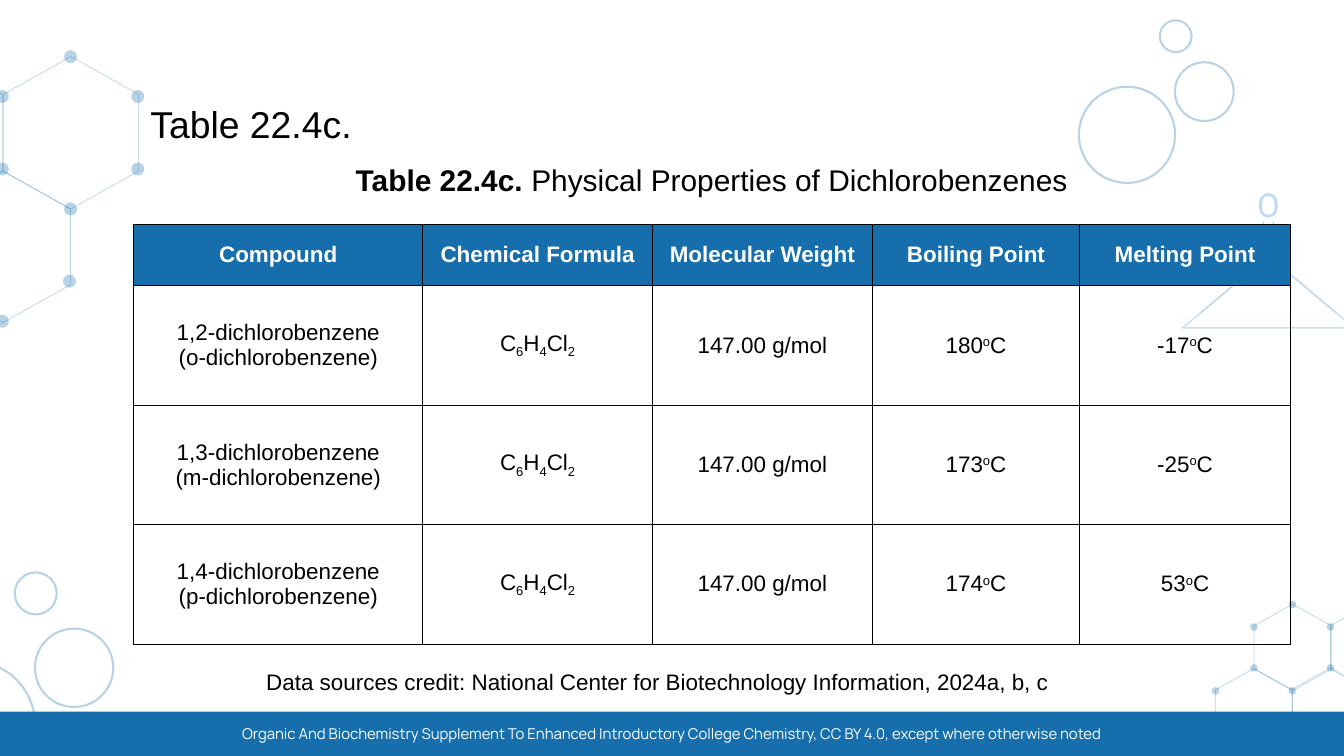
from lxml.etree import SubElement
from pptx import Presentation
from pptx.dml.color import RGBColor
from pptx.enum.shapes import MSO_CONNECTOR, MSO_SHAPE as SHAPE
from pptx.enum.text import MSO_ANCHOR as ANCHOR, PP_ALIGN as ALIGN
from pptx.oxml.ns import qn
from pptx.util import Pt

COLORS = {"blue": "166FAC", "sky": "267FFF", "black": "000000", "white": "FFFFFF", "paper": "FEFEFE"}
RGB = {name: RGBColor.from_string(value) for name, value in COLORS.items()}


def write(paragraph, text, size=24, color="black", font="Arial", bold=False, baseline=0, align=ALIGN.CENTER):
    paragraph.alignment = align
    run = paragraph.add_run()
    run.text = text
    run.font.size = Pt(size)
    run.font.name = font
    run.font.bold = bold
    run.font.color.rgb = RGB[color]
    if baseline:
        run.font._element.set("baseline", str(baseline * 1000))


def soften(shape):
    for color in shape._element.iter(qn("a:srgbClr")):
        SubElement(color, qn("a:alpha"), val="30000")


presentation = Presentation()
presentation.slide_width = Pt(1440)
presentation.slide_height = Pt(810)
slide = presentation.slides.add_slide(presentation.slide_layouts[5])
shapes = slide.shapes

band = shapes.add_shape(SHAPE.RECTANGLE, Pt(0), Pt(762.5), Pt(1440), Pt(47.5))
band.shadow.inherit = False
band.fill.solid()
band.fill.fore_color.rgb = RGB["blue"]
band.line.fill.background()

outlines = []
hexagons = [
    (76, 142.2, 72.7, 81.7), (-69.8, 142.2, 73, 81.7), (3.2, 264.6, 72.4, 81),
    (1467, 693.7, 41.4, 46.4), (1384.9, 693.7, 41.4, 46.4),
    (1425.6, 761.8, 41.4, 46.4), (1343.5, 762.5, 41.4, 46.4),
]
for x, y, half_width, half_height in hexagons:
    corners = [(0, -1), (1, -0.5), (1, 0.5), (0, 1), (-1, 0.5), (-1, -0.5)]
    points = [(Pt(x + dx * half_width), Pt(y + dy * half_height)) for dx, dy in corners]
    builder = shapes.build_freeform(*points[0])
    builder.add_line_segments(points[1:], close=True)
    outlines.append((builder.convert_to_shape(), 0.75))

bubbles = [
    (1156, 93, 103), (1258.8, 66.7, 63), (1242.7, 21.8, 34),
    (-99.4, 708, 137), (37.4, 673.5, 84), (15.8, 613.3, 45),
]
for left, top, size in bubbles:
    bubble = shapes.add_shape(SHAPE.OVAL, Pt(left), Pt(top), Pt(size), Pt(size))
    outlines.append((bubble, 2.25))

flask = shapes.add_shape(SHAPE.ISOSCELES_TRIANGLE, Pt(1267.2), Pt(274.3), Pt(183.6), Pt(77))
outlines.append((flask, 1.5))
for shape, width in outlines:
    shape.shadow.inherit = False
    shape.fill.background()
    shape.line.color.rgb = RGB["blue"]
    shape.line.width = Pt(width)
    soften(shape)

atoms = [
    (7, [(75.6, 60.8), (147.6, 103.4), (147.6, 181.1), (2.5, 103.4), (2.5, 181.1),
         (75.6, 223.9), (74.4, 301.3), (2.5, 344.2)]),
    (4, [(1384.9, 647.6), (1425.6, 671.8), (1425.6, 715.7), (1343.5, 671.8), (1343.5, 715.7),
         (1384.6, 740.2), (1302.5, 740.2)]),
]
filled = []
for radius, centers in atoms:
    for x, y in centers:
        atom = shapes.add_shape(SHAPE.OVAL, Pt(x - radius), Pt(y - radius), Pt(2 * radius), Pt(2 * radius))
        filled.append((atom, "blue"))
flask_base = shapes.add_shape(SHAPE.RECTANGLE, Pt(1267.2), Pt(334.8), Pt(183.6), Pt(23))
filled.append((flask_base, "paper"))
for shape, color in filled:
    shape.shadow.inherit = False
    shape.fill.solid()
    shape.fill.fore_color.rgb = RGB[color]
    shape.line.fill.background()
    soften(shape)

for x in (1353.6, 1364.4):
    bond = shapes.add_connector(MSO_CONNECTOR.STRAIGHT, Pt(x), Pt(237.6), Pt(x), Pt(279.4))
    bond.line.color.rgb = RGB["blue"]
    bond.line.width = Pt(1.69)
    SubElement(bond._element.spPr, qn("a:effectLst"))
    soften(bond)

oxygen = shapes.add_textbox(Pt(1344.2), Pt(190.8), Pt(29.5), Pt(46.8))
frame = oxygen.text_frame
frame.word_wrap = True
frame.margin_left = frame.margin_right = frame.margin_top = frame.margin_bottom = 0
frame.paragraphs[0].line_spacing = Pt(49.5)
write(frame.paragraphs[0], "O", size=35.3, color="sky", font="Roboto")
soften(oxygen)

title = shapes.title
title.left, title.top, title.width, title.height = Pt(154), Pt(46.8), Pt(1198), Pt(172)
title.text_frame.vertical_anchor = ANCHOR.MIDDLE
write(title.text_frame.paragraphs[0], "Table 22.4c.", size=40, align=ALIGN.LEFT)

caption = shapes.add_textbox(Pt(173.5), Pt(169.2), Pt(1178.6), Pt(64.8))
caption.text_frame.word_wrap = True
paragraph = caption.text_frame.paragraphs[0]
paragraph.space_before = Pt(4)
write(paragraph, "Table 22.4c. ", size=32, bold=True)
write(paragraph, "Physical Properties of Dichlorobenzenes", size=32)

headers = ["Compound", "Chemical Formula", "Molecular Weight", "Boiling Point", "Melting Point"]
compounds = [("1,2", "o", "180", "-17"), ("1,3", "m", "173", "-25"), ("1,4", "p", "174", "53")]
formula = [("C", 0), ("6", -25), ("H", 0), ("4", -25), ("Cl", 0), ("2", -25)]
degrees = [("o", 30), ("C", 0)]
rows = [[[[(header, 0)]] for header in headers]]
for locants, prefix, boiling, melting in compounds:
    rows.append([
        [[(f"{locants}-dichlorobenzene", 0)], [(f"({prefix}-dichlorobenzene)", 0)]],
        [formula],
        [[("147.00 g/mol", 0)]],
        [[(boiling, 0)] + degrees],
        [[(melting, 0)] + degrees],
    ])

table = shapes.add_table(4, 5, Pt(143.3), Pt(240.5), Pt(1239), Pt(450)).table
table.horz_banding = False
for column, width in zip(table.columns, (309.6, 246.2, 235.4, 222.5, 225.4)):
    column.width = Pt(width)
for row, height in zip(table.rows, (65.5, 128, 128, 128)):
    row.height = Pt(height)
for row_index, row in enumerate(rows):
    is_header = row_index == 0
    for column_index, lines in enumerate(row):
        cell = table.cell(row_index, column_index)
        cell.vertical_anchor = ANCHOR.MIDDLE
        properties = cell._tc.get_or_add_tcPr()
        for side in ("lnL", "lnR", "lnT", "lnB"):
            thick = (row_index, side) in ((0, "lnB"), (1, "lnT"))
            border = SubElement(properties, qn(f"a:{side}"), w=str(Pt(2 if thick else 1)))
            SubElement(SubElement(border, qn("a:solidFill")), qn("a:srgbClr"), val=COLORS["black"])
        if is_header:
            cell.fill.solid()
            cell.fill.fore_color.rgb = RGB["blue"]
        else:
            cell.fill.background()
        frame = cell.text_frame
        for line_index, runs in enumerate(lines):
            paragraph = frame.add_paragraph() if line_index else frame.paragraphs[0]
            for text, baseline in runs:
                write(paragraph, text, color="white" if is_header else "black", bold=is_header, baseline=baseline)

credit = shapes.add_textbox(Pt(184.3), Pt(712), Pt(1039.7), Pt(59.8))
credit.text_frame.word_wrap = True
paragraph = credit.text_frame.paragraphs[0]
paragraph.space_before = Pt(4)
write(paragraph, "Data sources credit: National Center for Biotechnology Information, 2024a, b, c")

footer = shapes.add_textbox(Pt(224), Pt(771.8), Pt(992), Pt(28.8))
footer.text_frame.word_wrap = True
footer.text_frame.vertical_anchor = ANCHOR.MIDDLE
write(
    footer.text_frame.paragraphs[0],
    "Organic And Biochemistry Supplement To Enhanced Introductory College Chemistry, "
    "CC BY 4.0, except where otherwise noted",
    size=16, color="white", font="Manrope",
)

presentation.save("out.pptx")
